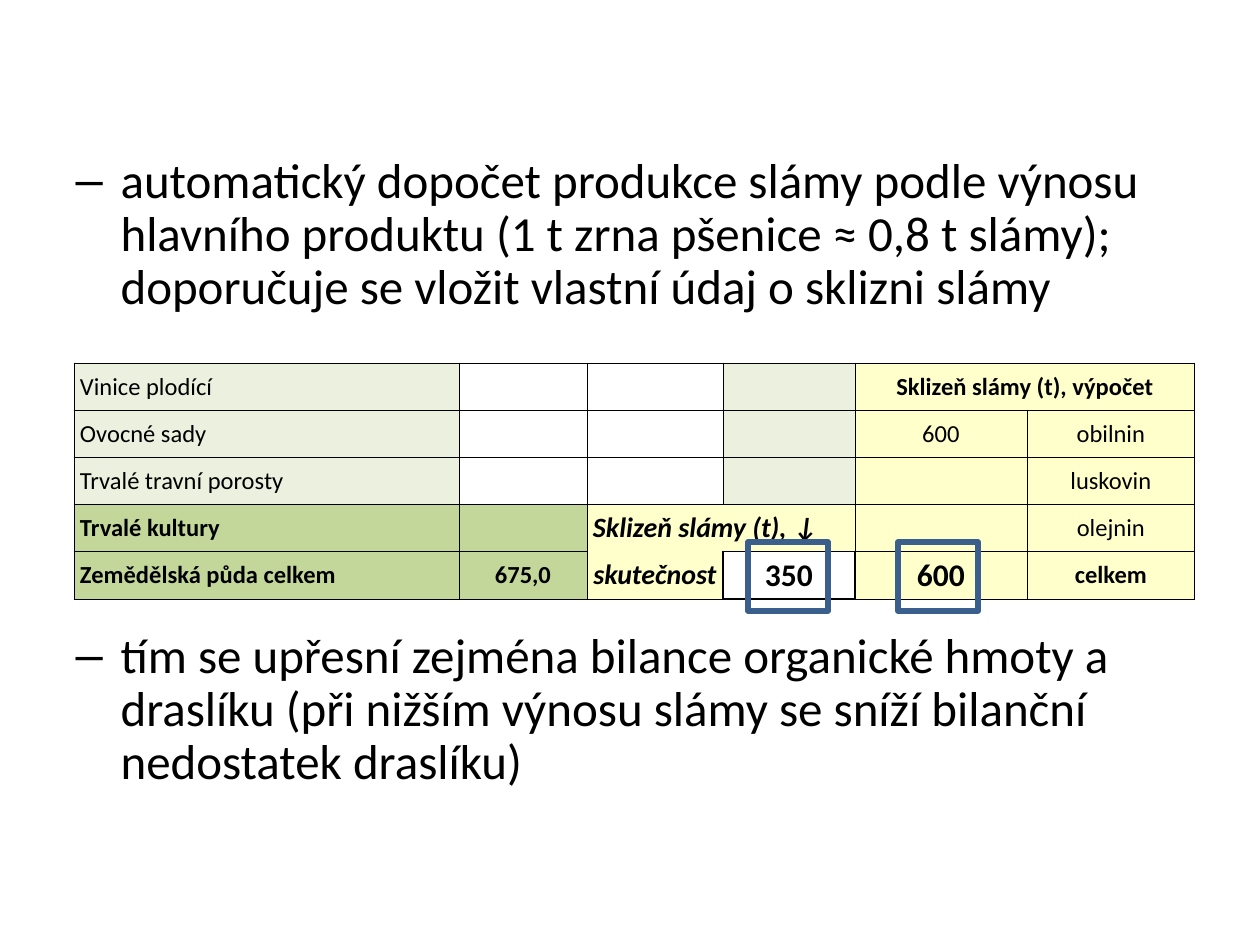
"""Build the slide on straw harvest: two points, a table and two marks."""
from lxml import etree
from pptx import Presentation
from pptx.dml.color import RGBColor
from pptx.enum.shapes import MSO_SHAPE
from pptx.enum.text import MSO_ANCHOR, MSO_AUTO_SIZE, PP_ALIGN
from pptx.oxml.ns import qn
from pptx.util import Pt

RECT = MSO_SHAPE.RECTANGLE
MIDDLE = MSO_ANCHOR.MIDDLE
LEFT, CENTER = PP_ALIGN.LEFT, PP_ALIGN.CENTER
NO_FIT = MSO_AUTO_SIZE.NONE
SCALE = 914400 / 126
FONT, BLACK, BLUE = "Calibri", "000000", "3A5F8C"

POINTS = [
    ("automatický dopočet produkce slámy podle výnosu hlavního produktu "
     "(1 t zrna pšenice ≈ 0,8 t slámy);\vdoporučuje se vložit vlastní údaj o sklizni slámy", 0),
    ("tím se upřesní zejména bilance organické hmoty a draslíku "
     "(při nižším výnosu slámy se sníží bilanční nedostatek draslíku)", 181),
]
COLS = [385, 128, 136, 132, 172, 168]
ROWS = [
    ["Vinice plodící", "", "", "", "Sklizeň slámy (t), výpočet", ""],
    ["Ovocné sady", "", "", "", "600", "obilnin"],
    ["Trvalé travní porosty", "", "", "", "", "luskovin"],
    ["Trvalé kultury", "", "Sklizeň slámy (t), ↓", "", "", "olejnin"],
    ["Zemědělská půda celkem", "675,0", "skutečnost", "350", "600", "celkem"],
]
FILLS = ["P--PYY", "P--PYY", "P--PYY", "GGYYYY", "GGY-YY"]
COLORS = {"P": "EBF1DE", "G": "C4D79B", "Y": "FFFFCC"}
MERGES = [((0, 4), (0, 5)), ((3, 2), (3, 3))]
BOLD = {(0, 4), (3, 0), (3, 2)} | {(4, col) for col in range(6)}
ITALIC = {(3, 2), (4, 2)}
SIZES = {(3, 2): 16, (4, 2): 16, (4, 3): 18, (4, 4): 18}
OPEN = {(3, 2, "B"), (4, 2, "T")}
THICK = (4, 3)
MARKS = [748, 898]


def px(num):
    return round(num * SCALE)


def rgb(code):
    return RGBColor.from_string(code)


def style(font, size, bold=False, italic=False):
    font.name, font.size = FONT, Pt(size)
    font.bold, font.italic = bold, italic
    font.color.rgb = rgb(BLACK)


def add_points(slide):
    body = slide.placeholders[1]
    body.left, body.top, body.width, body.height = map(px, (0, 156, 1235, 714))
    frame = body.text_frame
    frame.auto_size = NO_FIT
    frame.margin_top = 0
    for num, (text, gap) in enumerate(POINTS):
        para = frame.add_paragraph() if num else frame.paragraphs[0]
        para.text, para.level = text, 1
        para.line_spacing = 0.9
        para.space_before, para.space_after = Pt(gap), Pt(0)
        style(para.font, 28)
        props = para._p.get_or_add_pPr()
        props.set("marL", str(px(108)))
        props.set("indent", str(px(-45)))
        etree.SubElement(props, qn("a:buChar")).set("char", "–")
        props.append(props.find(qn("a:defRPr")))


def add_edges(cell, row, col):
    props = cell._tc.get_or_add_tcPr()
    width = Pt(1 if (row, col) == THICK else 0.5)
    for side in "LRTB":
        line = etree.SubElement(props, qn("a:ln" + side), w=str(width))
        if (row, col, side) in OPEN:
            etree.SubElement(line, qn("a:noFill"))
        else:
            fill = etree.SubElement(line, qn("a:solidFill"))
            etree.SubElement(fill, qn("a:srgbClr"), val=BLACK)


def fill_cell(cell, row, col):
    spot = row, col
    add_edges(cell, row, col)
    code = FILLS[row][col]
    if code in COLORS:
        cell.fill.solid()
        cell.fill.fore_color.rgb = rgb(COLORS[code])
    else:
        cell.fill.background()
    flush = col == 0 or spot == (3, 2)
    cell.margin_left = px(6 if flush else 0)
    cell.margin_right = cell.margin_top = cell.margin_bottom = 0
    cell.vertical_anchor = MIDDLE
    para = cell.text_frame.paragraphs[0]
    para.text = ROWS[row][col]
    para.alignment = LEFT if flush else CENTER
    style(para.font, SIZES.get(spot, 14), spot in BOLD, spot in ITALIC)


def add_grid(slide):
    frame = slide.shapes.add_table(len(ROWS), len(COLS), px(74), px(363), px(sum(COLS)), px(236))
    table = frame.table
    table.first_row = table.horz_banding = False
    for col, width in enumerate(COLS):
        table.columns[col].width = px(width)
    for row in range(len(ROWS)):
        for col in range(len(COLS)):
            fill_cell(table.cell(row, col), row, col)
    for start, end in MERGES:
        table.cell(*start).merge(table.cell(*end))


def add_marks(slide):
    for left in MARKS:
        mark = slide.shapes.add_shape(RECT, px(left), px(542), px(80), px(69))
        mark.shadow.inherit = False
        mark.fill.background()
        mark.line.color.rgb = rgb(BLUE)
        mark.line.width = Pt(3)


def main():
    deck = Presentation()
    deck.slide_width, deck.slide_height = px(1260), px(945)
    slide = deck.slides.add_slide(deck.slide_layouts[1])
    title = slide.shapes.title.element
    title.getparent().remove(title)
    add_points(slide)
    add_grid(slide)
    add_marks(slide)
    deck.save("out.pptx")


if __name__ == "__main__":
    main()
